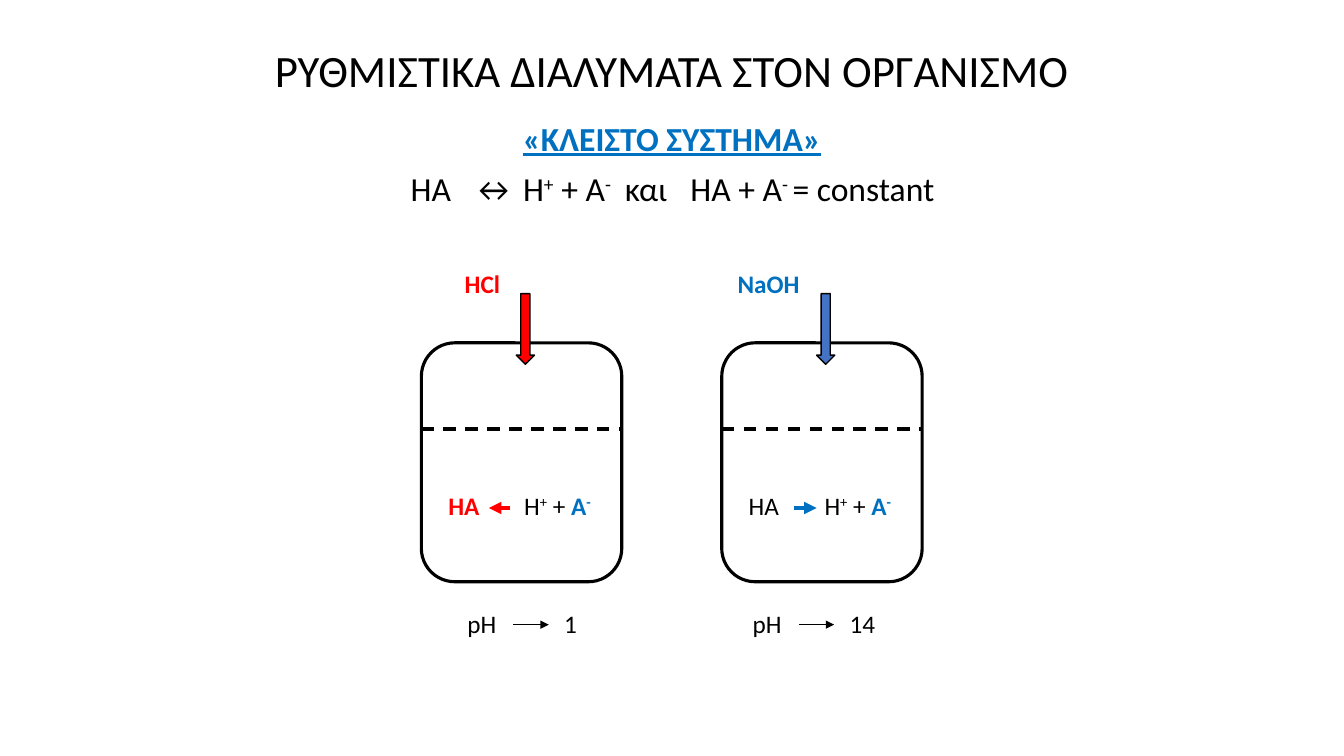
from dataclasses import dataclass

import pptx
import pptx.util
from lxml import etree
from pptx.dml.color import RGBColor
from pptx.enum.dml import MSO_LINE
from pptx.enum.shapes import MSO_CONNECTOR, MSO_SHAPE
from pptx.enum.text import MSO_ANCHOR, PP_ALIGN
from pptx.oxml.ns import qn
from pptx.util import Cm


@dataclass(frozen=True)
class Theme:
    font: str = "Calibri"
    black: str = "000000"
    red: str = "FF0000"
    blue: str = "0070C0"
    steel: str = "4472C4"
    title: int = 32
    body: int = 24
    label: int = 18


THEME = Theme()


@dataclass(frozen=True)
class Run:
    text: str
    color: str = THEME.black
    bold: bool = False
    underline: bool = False
    superscript: bool = False


@dataclass(frozen=True)
class Tank:
    left: float
    reagent: Run
    reagent_left: float
    reagent_width: float
    reagent_fill: str
    acid: Run
    shift_from: float
    shift_to: float
    shift_color: str
    ph_left: float
    ph_value: str


# Lengths in centimetres
SLIDE_WIDTH, SLIDE_HEIGHT = 33.87, 19.05
TANK_TOP, TANK_WIDTH, TANK_HEIGHT = 8.64, 5.05, 6.02
LABEL_HEIGHT = 1.02


def add_text(slide, left, top, width, height, runs, size, tabs=(),
             align=PP_ALIGN.LEFT, anchor=MSO_ANCHOR.TOP, spacing=1.0):
    box = slide.shapes.add_textbox(Cm(left), Cm(top), Cm(width), Cm(height))
    frame = box.text_frame
    frame.word_wrap = True
    frame.vertical_anchor = anchor
    paragraph = frame.paragraphs[0]
    if tabs:
        properties = paragraph._p.get_or_add_pPr()
        tab_list = etree.SubElement(properties, qn("a:tabLst"))
        for position in tabs:
            etree.SubElement(tab_list, qn("a:tab"), pos=str(Cm(position)), algn="l")
    paragraph.alignment = align
    paragraph.line_spacing = spacing
    for item in runs:
        run = paragraph.add_run()
        run.text = item.text
        font = run.font
        font.name = THEME.font
        font.size = pptx.util.Pt(size)
        font.bold = item.bold
        font.underline = item.underline
        font.color.rgb = RGBColor.from_string(item.color)
        if item.superscript:
            run._r.get_or_add_rPr().set("baseline", "30000")


def add_outlined_shape(slide, kind, left, top, width, height, line_width, fill=None):
    shape = slide.shapes.add_shape(kind, Cm(left), Cm(top), Cm(width), Cm(height))
    shape.shadow.inherit = False
    if fill:
        shape.fill.solid()
        shape.fill.fore_color.rgb = RGBColor.from_string(fill)
    else:
        shape.fill.background()
    shape.line.color.rgb = RGBColor.from_string(THEME.black)
    shape.line.width = pptx.util.Pt(line_width)


def add_horizontal_line(slide, start, end, y, color, width, dashed=False, arrow=False):
    connector = slide.shapes.add_connector(
        MSO_CONNECTOR.STRAIGHT, Cm(start), Cm(y), Cm(end), Cm(y))
    line = connector.line
    line.color.rgb = RGBColor.from_string(color)
    line.width = pptx.util.Pt(width)
    if dashed:
        line.dash_style = MSO_LINE.DASH
    properties = connector._element.spPr
    if arrow:
        etree.SubElement(properties.find(qn("a:ln")), qn("a:tailEnd"), type="triangle")
    etree.SubElement(properties, qn("a:effectLst"))


def add_tank(slide, tank):
    # Vessel and liquid level
    add_outlined_shape(slide, MSO_SHAPE.ROUNDED_RECTANGLE, tank.left, TANK_TOP,
                       TANK_WIDTH, TANK_HEIGHT, 2.25)
    add_horizontal_line(slide, tank.left, tank.left + TANK_WIDTH, 10.81,
                        THEME.black, 2.25, dashed=True)

    # Added reagent
    add_text(slide, tank.reagent_left, 6.63, tank.reagent_width, LABEL_HEIGHT,
             [tank.reagent], THEME.label)
    add_outlined_shape(slide, MSO_SHAPE.DOWN_ARROW, tank.left + 2.39, 7.4,
                       0.46, 1.78, 1, tank.reagent_fill)

    # Shift of the equilibrium
    reaction = [tank.acid, Run("\tΗ"), Run("+", superscript=True), Run(" + "),
                Run("Α", THEME.blue, bold=True),
                Run("-", THEME.blue, bold=True, superscript=True)]
    add_text(slide, tank.left + 0.43, 12.22, 4.4, LABEL_HEIGHT, reaction,
             THEME.label, tabs=[1.91])
    add_horizontal_line(slide, tank.left + tank.shift_from, tank.left + tank.shift_to,
                        12.8, tank.shift_color, 3, arrow=True)

    # Resulting pH
    add_text(slide, tank.ph_left, 15.21, 4.2, LABEL_HEIGHT,
             [Run("pH\t" + tank.ph_value)], THEME.label, tabs=[2.44])
    add_horizontal_line(slide, tank.ph_left + 1.41, tank.ph_left + 2.3, 15.74,
                        THEME.black, 0.5, arrow=True)


def add_heading(slide):
    add_text(slide, 0, 0, SLIDE_WIDTH, 3.68,
             [Run("ΡΥΘΜΙΣΤΙΚΑ ΔΙΑΛΥΜΑΤΑ ΣΤΟΝ ΟΡΓΑΝΙΣΜΟ")], THEME.title,
             align=PP_ALIGN.CENTER, anchor=MSO_ANCHOR.MIDDLE, spacing=0.9)
    add_text(slide, 0, 2.95, SLIDE_WIDTH, 1.2,
             [Run("«ΚΛΕΙΣΤΟ ΣΥΣΤΗΜΑ»", THEME.blue, bold=True, underline=True)],
             THEME.body, align=PP_ALIGN.CENTER, spacing=0.9)
    equilibrium = [Run("ΗΑ\t↔ Η"), Run("+", superscript=True), Run(" + Α"),
                   Run("-", superscript=True), Run("\tκαι\tΗΑ + A"),
                   Run("- ", superscript=True), Run("= constant")]
    add_text(slide, 10.1, 4.23, 15, 1.2, equilibrium, THEME.body,
             tabs=[1.55, 5.4, 7.05], spacing=0.9)


def main():
    presentation = pptx.Presentation()
    presentation.slide_width = Cm(SLIDE_WIDTH)
    presentation.slide_height = Cm(SLIDE_HEIGHT)
    slide = presentation.slides.add_slide(presentation.slide_layouts[6])
    add_heading(slide)
    add_tank(slide, Tank(
        left=10.62, reagent=Run("HCl", THEME.red, bold=True), reagent_left=11.46,
        reagent_width=1.5, reagent_fill=THEME.red,
        acid=Run("ΗΑ", THEME.red, bold=True), shift_from=2.24, shift_to=1.7,
        shift_color=THEME.red, ph_left=11.53, ph_value="1"))
    add_tank(slide, Tank(
        left=18.19, reagent=Run("NaOH", THEME.blue, bold=True), reagent_left=18.34,
        reagent_width=2.2, reagent_fill=THEME.steel,
        acid=Run("ΗΑ"), shift_from=1.83, shift_to=2.39,
        shift_color=THEME.blue, ph_left=18.72, ph_value="14"))
    presentation.save("out.pptx")


if __name__ == "__main__":
    main()
